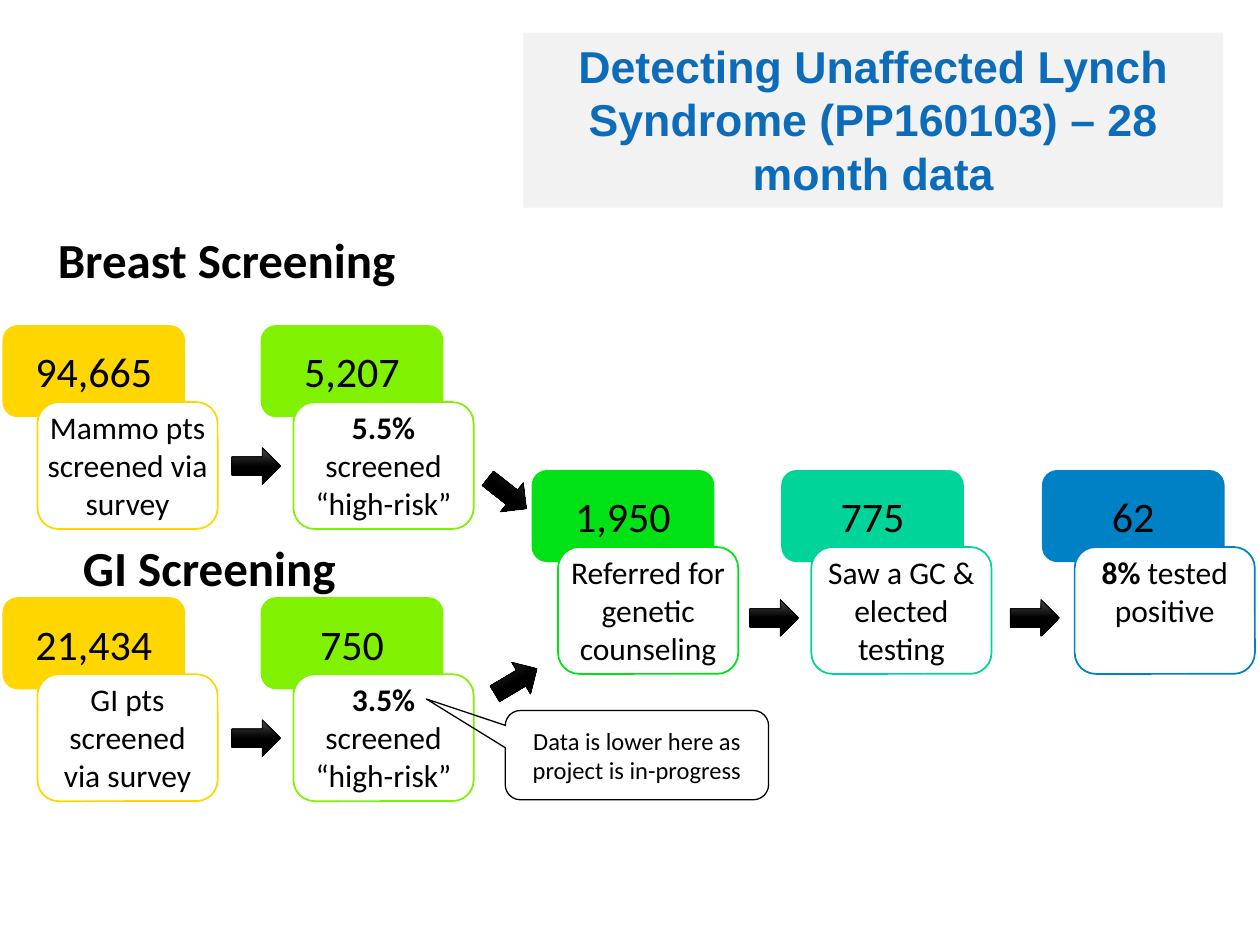
from lxml import etree
from pptx import Presentation
from pptx.dml import color
from pptx.enum import shapes, text
from pptx.util import Pt

COLOURS = {
    "yellow": "FFD600", "lime": "80F100", "green": "00E215", "teal": "00D499",
    "blue": "0081C6", "heading": "0D6CB9", "panel": "F2F2F2",
    "white": "FFFFFF", "black": "000000", "sheen": "4B4B4B",
}
BADGE = (104.4, 52.6)
CARD = (103, 72.5)
ARROW = (28, 21)
CARD_DROP = 44
SHAPE = shapes.MSO_SHAPE
BODY = {"size": 18, "font": "Calibri", "colour": "black"}
NUMBER = {**BODY, "size": 24}
HEADING = {**BODY, "size": 28, "bold": True}
NOTE = {**BODY, "size": 14}
TITLE = {"size": 25.5, "font": "Arial", "colour": "heading", "bold": True}

SCREENING_ARROWS = [(131, 70, 0)]
SCREENINGS = [
    ((1.4, 185.8), [
        (0, 20, "yellow", "94,665", "", "Mammo pts screened via survey", 3),
        (147.6, 166.3, "lime", "5,207", "5.5%", " screened “high-risk”", 0)]),
    ((1.4, 341.3), [
        (0, 20, "yellow", "21,434", "", "GI pts screened via survey", 0),
        (147.6, 166.3, "lime", "750", "3.5%", " screened “high-risk”", 0)]),
]
TESTING = [
    (0, 15.1, "green", "1,950", "", "Referred for genetic counseling", 0),
    (142.6, 159.8, "teal", "775", "", "Saw a GC & elected testing", 0),
    (291.6, 310.3, "blue", "62", "8% ", "tested positive", 0),
]
TESTING_ARROWS = [(-28, 2.9, 38.2), (-23, 110.2, 329.2), (124.6, 74, 0), (273.6, 74, 0)]


def rgb(name):
    """Return the named colour."""
    return color.RGBColor.from_string(COLOURS[name])


def write(frame, runs, style, align=text.PP_ALIGN.CENTER, **frame_format):
    """Write (words, bold) runs as one paragraph in a wrapping frame."""
    for key, value in {"word_wrap": True, **frame_format}.items():
        setattr(frame, key, value)
    paragraph = frame.paragraphs[0]
    paragraph.alignment = align
    for words, bold in runs:
        run = paragraph.add_run()
        run.text = words
        font_format = {"size": Pt(style["size"]), "name": style["font"],
                       "bold": bold or style.get("bold", False)}
        for key, value in font_format.items():
            setattr(run.font, key, value)
        run.font.color.rgb = rgb(style["colour"])
    return paragraph


def add_block(slide, preset, box, fill=None, line=None, width=1):
    """Add a flat preset shape with an optional fill and outline."""
    block = slide.shapes.add_shape(preset, *map(Pt, box))
    block.shadow.inherit = False
    if fill:
        block.fill.solid()
        block.fill.fore_color.rgb = rgb(fill)
    else:
        block.fill.background()
    if line:
        block.line.color.rgb = rgb(line)
        block.line.width = Pt(width)
    else:
        block.line.fill.background()
    return block


def add_label(slide, box, runs, style, align=text.PP_ALIGN.CENTER, **frame_format):
    """Add a text box with one paragraph."""
    label = slide.shapes.add_textbox(*map(Pt, box))
    return write(label.text_frame, runs, style, align, **frame_format)


def add_arrow(slide, box, rotation):
    """Add a glossy black block arrow."""
    arrow = add_block(slide, SHAPE.RIGHT_ARROW, box, "black", "black", 0.5)
    arrow.rotation = rotation
    arrow.fill.gradient()
    arrow.fill.gradient_angle = 270
    for stop, (position, shade) in zip(arrow.fill.gradient_stops,
                                       [(0, "sheen"), (0.5, "black")]):
        stop.position = position
        stop.color.rgb = rgb(shade)


def add_stage(slide, badge_box, card_box, colour, count, lead, caption, spread):
    """Add a count badge overlapped by its captioned card."""
    badge = add_block(slide, SHAPE.ROUNDED_RECTANGLE, badge_box, colour)
    write(badge.text_frame, [(count, False)], NUMBER,
          vertical_anchor=text.MSO_ANCHOR.MIDDLE)
    add_block(slide, SHAPE.ROUNDED_RECTANGLE, card_box, "white", colour)
    left, top, width, height = card_box
    runs = [(words, bold) for words, bold in ((lead, True), (caption, False)) if words]
    add_label(slide, (left - spread, top, width + 2 * spread, height), runs, BODY,
              auto_size=text.MSO_AUTO_SIZE.SHAPE_TO_FIT_TEXT)


def add_pathway(slide, origin, stages, arrows):
    """Add a row of stages and its arrows from the given corner."""
    left, top = origin
    for badge_dx, card_dx, *content in stages:
        add_stage(slide, (left + badge_dx, top, *BADGE),
                  (left + card_dx, top + CARD_DROP, *CARD), *content)
    for dx, dy, rotation in arrows:
        add_arrow(slide, (left + dx, top + dy, *ARROW), rotation)


def add_title(slide, box):
    """Add the title panel."""
    panel = add_block(slide, SHAPE.RECTANGLE, box, "panel")
    heading = "Detecting Unaffected Lynch Syndrome (PP160103) – 28 month data"
    paragraph = write(panel.text_frame, [(heading, False)], TITLE,
                      vertical_anchor=text.MSO_ANCHOR.TOP)
    paragraph.line_spacing = Pt(30.5)


def add_note(slide, box):
    """Add the callout that explains the lower figure."""
    note = add_block(slide, SHAPE.ROUNDED_RECTANGULAR_CALLOUT, box, None, "black", 0.75)
    for index, value in enumerate((-0.8, -0.63, 0.17)):
        note.adjustments[index] = value
    write(note.text_frame, [("Data is lower here as project is in-progress", False)],
          NOTE, vertical_anchor=text.MSO_ANCHOR.MIDDLE)


def main():
    """Build and save the slide."""
    deck = Presentation()
    deck.slide_width, deck.slide_height = Pt(720), Pt(540)
    slide = deck.slides.add_slide(deck.slide_layouts[6])
    add_title(slide, (299, 18.7, 400, 100))
    breast = add_label(slide, (26, 80.6, 293, 88), [("Breast Screening", False)], HEADING,
                       text.PP_ALIGN.LEFT, vertical_anchor=text.MSO_ANCHOR.BOTTOM)
    breast.line_spacing = 0.9
    add_label(slide, (40.3, 303.8, 175, 39), [("GI Screening", False)], HEADING,
              text.PP_ALIGN.LEFT)
    for origin, stages in SCREENINGS:
        add_pathway(slide, origin, stages, SCREENING_ARROWS)
    add_pathway(slide, (303.8, 268.6), TESTING, TESTING_ARROWS)
    add_note(slide, (288.7, 406, 150.5, 51))
    deck.save("out.pptx")


if __name__ == "__main__":
    main()
